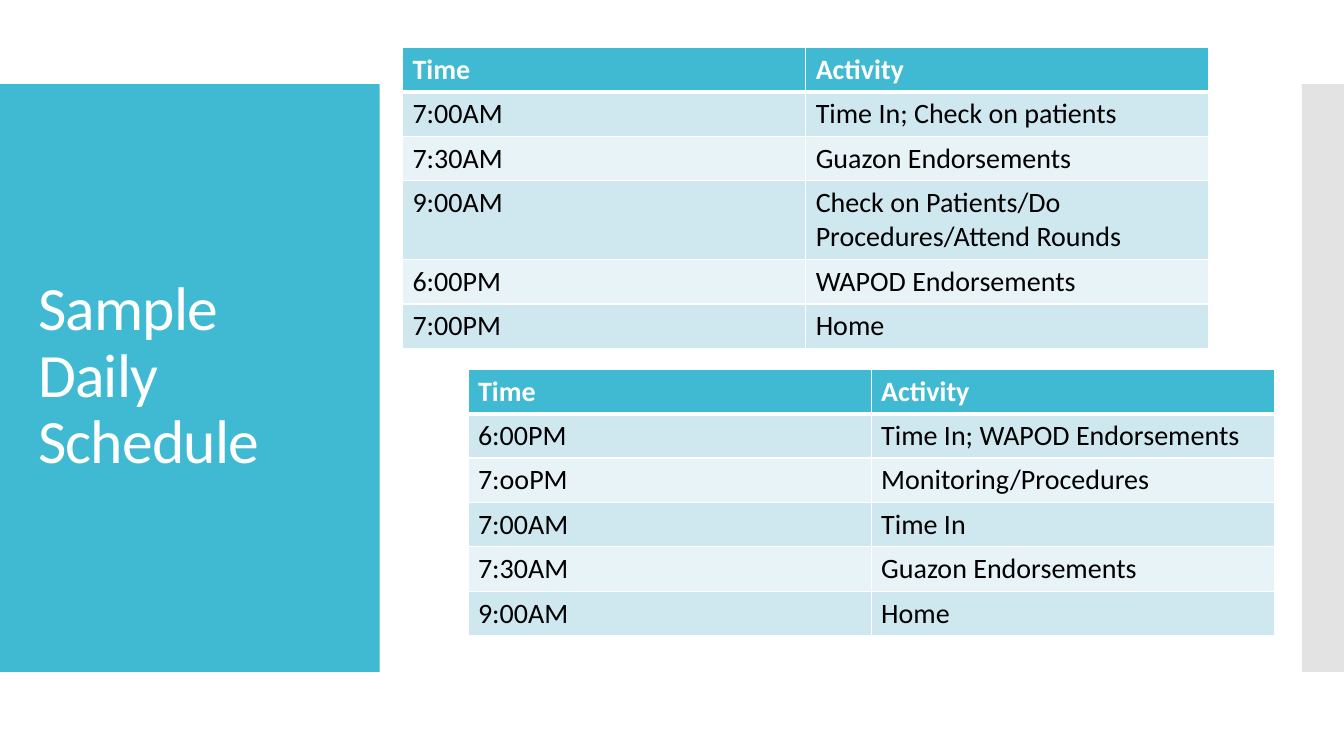
from lxml import etree
from pptx import Presentation
from pptx.dml.color import RGBColor
from pptx.enum.shapes import MSO_SHAPE
from pptx.enum.text import MSO_ANCHOR, MSO_AUTO_SIZE, PP_ALIGN
from pptx.oxml.ns import qn
from pptx.util import Pt

RECTANGLE = MSO_SHAPE.RECTANGLE
MIDDLE = MSO_ANCHOR.MIDDLE
NO_AUTOFIT = MSO_AUTO_SIZE.NONE
LEFT = PP_ALIGN.LEFT
TITLE_ONLY = 5

FONT = "Calibri"
TEAL, WHITE, BLACK, GREY = "40BAD2", "FFFFFF", "000000", "C8C8C8"
BANDS = ("CFE7EE", "E8F3F7")
PANEL_TOP, PANEL_HEIGHT = 60, 420
COLUMN_WIDTH, ROW_HEIGHT = 288, 31.7
THIN, THICK = 1, 3

HEADINGS = ("Time", "Activity")
DAY_SHIFT = (
    HEADINGS,
    ("7:00AM", "Time In; Check on patients"),
    ("7:30AM", "Guazon Endorsements"),
    ("9:00AM", "Check on Patients/Do Procedures/Attend Rounds"),
    ("6:00PM", "WAPOD Endorsements"),
    ("7:00PM", "Home"),
)
NIGHT_SHIFT = (
    HEADINGS,
    ("6:00PM", "Time In; WAPOD Endorsements"),
    ("7:ooPM", "Monitoring/Procedures"),
    ("7:00AM", "Time In"),
    ("7:30AM", "Guazon Endorsements"),
    ("9:00AM", "Home"),
)


def paint(color_format, hex_color):
    """Set a colour format from a hex string."""
    color_format.rgb = RGBColor.from_string(hex_color)


def fill_solid(fill, hex_color):
    """Give a fill one solid colour."""
    fill.solid()
    paint(fill.fore_color, hex_color)


def add_run(paragraph, text, size, hex_color, bold=False):
    """Append a formatted run to a paragraph and return it."""
    run = paragraph.add_run()
    run.text = text
    run.font.name = FONT
    run.font.size = Pt(size)
    run.font.bold = bold
    paint(run.font.color, hex_color)
    return run


def add_panel(slide, left, width, hex_color, opacity=100):
    """Add a plain side panel, optionally translucent."""
    panel = slide.shapes.add_shape(
        RECTANGLE, Pt(left), Pt(PANEL_TOP), Pt(width), Pt(PANEL_HEIGHT))
    panel.shadow.inherit = False
    panel.line.fill.background()
    fill_solid(panel.fill, hex_color)
    if opacity < 100:
        color = panel.element.spPr.find(qn("a:solidFill"))[0]
        etree.SubElement(color, qn("a:alpha"), val=str(opacity * 1000))


def set_title(slide, text):
    """Move the title in front of the panels, then format and fill it."""
    title = slide.shapes.title
    slide.shapes.element.append(title.element)
    title.left, title.top = Pt(20), Pt(88.5)
    title.width, title.height = Pt(232), Pt(362)
    frame = title.text_frame
    frame.word_wrap = True
    frame.auto_size = NO_AUTOFIT
    frame.vertical_anchor = MIDDLE
    paragraph = frame.paragraphs[0]
    paragraph.alignment = LEFT
    paragraph.line_spacing = 0.9
    run = add_run(paragraph, text, 44, WHITE)
    run.font.element.set("spc", "-60") if hasattr(run.font, "element") else \
        run.font._element.set("spc", "-60")


def set_borders(cell, top, bottom):
    """Draw white borders with the given top and bottom widths."""
    properties = cell._tc.get_or_add_tcPr()
    widths = {"a:lnL": THIN, "a:lnR": THIN, "a:lnT": top, "a:lnB": bottom}
    for position, (tag, width) in enumerate(widths.items()):
        border = etree.Element(qn(tag), w=str(Pt(width)))
        solid = etree.SubElement(border, qn("a:solidFill"))
        etree.SubElement(solid, qn("a:srgbClr"), val=WHITE)
        properties.insert(position, border)


def add_schedule(slide, left, top, entries):
    """Add a banded schedule table with a heading row."""
    table = slide.shapes.add_table(
        len(entries), len(HEADINGS), Pt(left), Pt(top),
        Pt(COLUMN_WIDTH * len(HEADINGS)), Pt(ROW_HEIGHT * len(entries))).table
    for row_index, entry in enumerate(entries):
        heading = row_index == 0
        background = TEAL if heading else BANDS[(row_index - 1) % 2]
        for column_index, text in enumerate(entry):
            cell = table.cell(row_index, column_index)
            fill_solid(cell.fill, background)
            set_borders(cell, THICK if row_index == 1 else THIN,
                        THICK if heading else THIN)
            add_run(cell.text_frame.paragraphs[0], text, 20,
                    WHITE if heading else BLACK, heading)


def main():
    """Build the daily schedule slide."""
    presentation = Presentation()
    presentation.slide_width, presentation.slide_height = Pt(960), Pt(540)
    slide = presentation.slides.add_slide(
        presentation.slide_layouts[TITLE_ONLY])
    add_panel(slide, 0, 271.25, TEAL)
    add_panel(slide, 930, 30, GREY, 50)
    set_title(slide, "Sample Daily Schedule")
    add_schedule(slide, 287.5, 34, DAY_SHIFT)
    add_schedule(slide, 334.25, 263.75, NIGHT_SHIFT)
    presentation.save("out.pptx")


if __name__ == "__main__":
    main()
